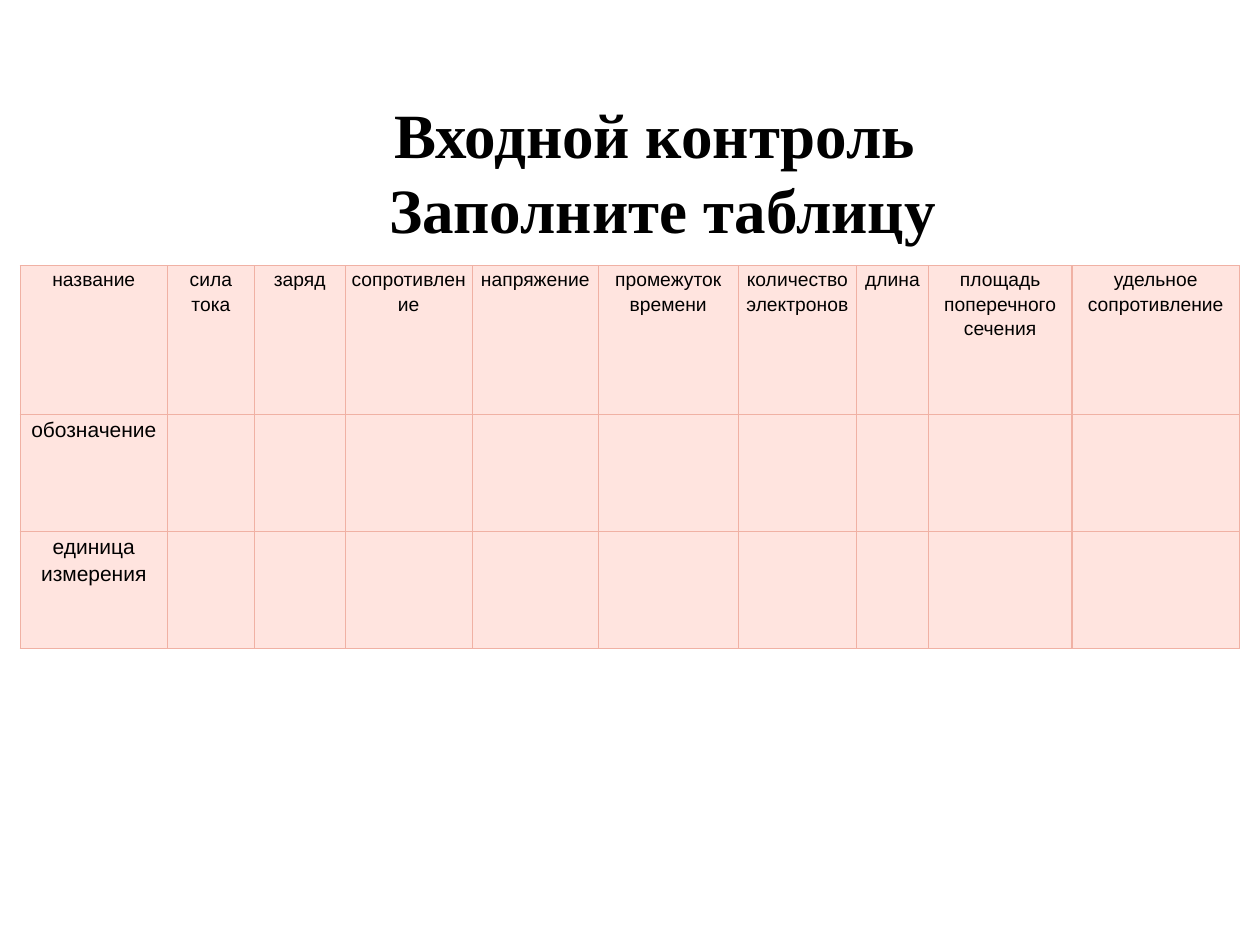
from lxml.etree import SubElement
from pptx import Presentation
from pptx.dml.color import RGBColor
from pptx.enum.text import MSO_ANCHOR, MSO_AUTO_SIZE, PP_ALIGN
from pptx.oxml.ns import qn
from pptx.util import Inches, Pt

COLORS = {"text": "000000", "cell": "FFE4DF", "border": "F0B1A4"}
TITLE = "Входной контроль \nЗаполните таблицу"
HEADERS = ["название", "сила тока", "заряд", "сопротивление", "напряжение",
           "промежуток времени", "количество электронов", "длина",
           "площадь поперечного сечения", "удельное сопротивление"]
ROW_LABELS = ["обозначение", "единица измерения"]
COL_WIDTHS = [1.17, 0.69, 0.72, 1.01, 1, 1.11, 0.94, 0.57, 1.14, 1.33]
ROW_HEIGHTS = [1.18, 0.93, 0.93]


def format_text(tf, font_name, size, bold=False):
    for p in tf.paragraphs:
        p.alignment = PP_ALIGN.CENTER
        for r in p.runs:
            r.font.name = font_name
            r.font.size = Pt(size)
            r.font.bold = bold
            r.font.color.rgb = RGBColor.from_string(COLORS["text"])


def set_title(s):
    title = s.shapes.title
    title.left, title.top = Inches(2.97), Inches(0.7)
    title.width, title.height = Inches(4.58), Inches(1.31)
    tf = title.text_frame
    tf.text = TITLE
    tf.word_wrap = False
    tf.auto_size = MSO_AUTO_SIZE.SHAPE_TO_FIT_TEXT
    tf.vertical_anchor = MSO_ANCHOR.MIDDLE
    format_text(tf, "Times New Roman", 36, bold=True)


def set_borders(cell):
    """Draw all four cell borders; they must come before the fill."""
    tc_pr = cell._tc.get_or_add_tcPr()
    for side in ("a:lnL", "a:lnR", "a:lnT", "a:lnB"):
        ln = SubElement(tc_pr, qn(side), w=str(Pt(0.75)))
        fill = SubElement(ln, qn("a:solidFill"))
        SubElement(fill, qn("a:srgbClr"), val=COLORS["border"])


def format_cell(cell, text, size):
    set_borders(cell)
    cell.fill.solid()
    cell.fill.fore_color.rgb = RGBColor.from_string(COLORS["cell"])
    cell.margin_left = cell.margin_right = Inches(0.05)
    cell.margin_top = cell.margin_bottom = 0
    if text:
        cell.text_frame.text = text
        cell.text_frame.paragraphs[0].line_spacing = 1.15
        format_text(cell.text_frame, "Arial", size)


def add_quantity_table(s):
    table = s.shapes.add_table(
        len(ROW_HEIGHTS), len(COL_WIDTHS), Inches(0.16), Inches(2.11),
        Inches(sum(COL_WIDTHS)), Inches(sum(ROW_HEIGHTS))).table
    table.first_row = table.horz_banding = False
    for column, width in zip(table.columns, COL_WIDTHS):
        column.width = Inches(width)
    blanks = [""] * (len(HEADERS) - 1)
    rows = [HEADERS] + [[label] + blanks for label in ROW_LABELS]
    for i, (row, texts) in enumerate(zip(table.rows, rows)):
        row.height = Inches(ROW_HEIGHTS[i])
        for cell, text in zip(row.cells, texts):
            format_cell(cell, text, 11 if i == 0 else 12)


def main():
    prs = Presentation()
    prs.slide_width, prs.slide_height = Inches(10), Inches(7.5)
    s = prs.slides.add_slide(prs.slide_layouts[5])
    add_quantity_table(s)
    set_title(s)
    prs.save("out.pptx")


if __name__ == "__main__":
    main()
